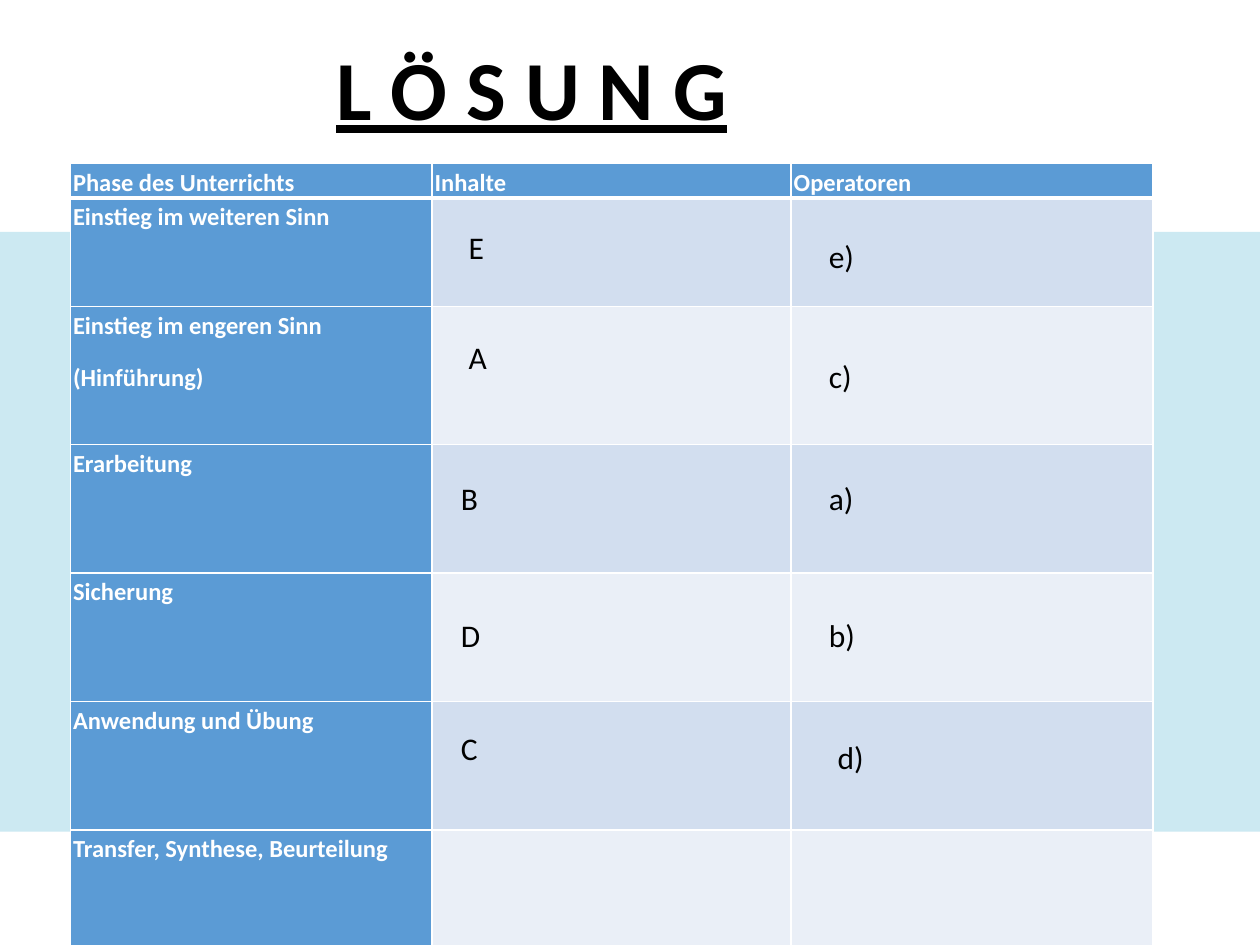
from dataclasses import dataclass

import lxml.etree
import pptx
import pptx.dml.color
import pptx.enum.shapes
import pptx.enum.text
import pptx.oxml.ns
import pptx.util

COLORS = {
    "band": "CCE9F2",
    "heading": "5B9BD5",
    "odd_row": "D2DEEF",
    "even_row": "EAEFF7",
    "white": "FFFFFF",
    "black": "000000",
}
FONT = "Calibri"
SLIDE_WIDTH, SLIDE_HEIGHT = pptx.util.Inches(10), pptx.util.Inches(7.5)
HEADINGS = ("Phase des Unterrichts", "Inhalte", "Operatoren")
COLUMN_WIDTHS = (28.7, 28.5, 28.7)  # percent of the slide's width


@dataclass(frozen=True)
class Box:
    """Position and size in percent of the slide."""
    left: float
    top: float
    width: float
    height: float

    def lengths(self) -> tuple[int, int, int, int]:
        return (
            int(SLIDE_WIDTH * self.left / 100),
            int(SLIDE_HEIGHT * self.top / 100),
            int(SLIDE_WIDTH * self.width / 100),
            int(SLIDE_HEIGHT * self.height / 100),
        )


@dataclass(frozen=True)
class Phase:
    name: str
    height: float  # percent of the slide's height


@dataclass(frozen=True)
class Answer:
    text: str
    left: float
    top: float
    width: float


PHASES = (
    Phase("Einstieg im weiteren Sinn", 11.47),
    Phase("Einstieg im engeren Sinn\n(Hinführung)", 14.6),
    Phase("Erarbeitung", 13.6),
    Phase("Sicherung", 13.6),
    Phase("Anwendung und Übung", 13.6),
    Phase("Transfer, Synthese, Beurteilung", 13.6),
)
HEADER_HEIGHT = 3.6
ANSWER_HEIGHT = 5.33
ANSWERS = (
    Answer("E", 36.2, 23.47, 22.9),
    Answer("A", 36.2, 35.07, 23.8),
    Answer("B", 35.6, 50, 24.8),
    Answer("D", 35.6, 64.53, 21.1),
    Answer("C", 35.6, 76.53, 23.4),
    Answer("e)", 64.8, 24.4, 20.2),
    Answer("c)", 64.8, 37.07, 20.2),
    Answer("a)", 64.8, 50, 21.8),
    Answer("b)", 64.8, 64.53, 21.1),
    Answer("d)", 65.5, 77.47, 22.7),
)


def rgb(name: str) -> pptx.dml.color.RGBColor:
    return pptx.dml.color.RGBColor.from_string(COLORS[name])


def write(frame, text: str, *, size: float, color: str = "black", bold: bool = False,
          underline: bool = False, line_spacing: float = 1.0, space_after: float = 0) -> None:
    frame.text = text
    for paragraph in frame.paragraphs:
        paragraph.alignment = pptx.enum.text.PP_ALIGN.LEFT
        paragraph.line_spacing = line_spacing
        paragraph.space_after = pptx.util.Pt(space_after)
        font = paragraph.font
        font.name, font.size = FONT, pptx.util.Pt(size)
        font.bold, font.underline = bold, underline
        font.color.rgb = rgb(color)


def add_title(slide, text: str, box: Box) -> None:
    title = slide.shapes.title
    title.left, title.top, title.width, title.height = box.lengths()
    frame = title.text_frame
    frame.word_wrap = True
    frame.auto_size = pptx.enum.text.MSO_AUTO_SIZE.NONE
    frame.vertical_anchor = pptx.enum.text.MSO_ANCHOR.TOP
    write(frame, text, size=48, bold=True, underline=True)


def add_band(slide, box: Box) -> None:
    band = slide.shapes.add_shape(pptx.enum.shapes.MSO_SHAPE.RECTANGLE, *box.lengths())
    band.shadow.inherit = False
    band.fill.solid()
    band.fill.fore_color.rgb = rgb("band")
    band.line.fill.background()


def set_borders(cell, **widths: float) -> None:
    """Draw white borders; the keywords L, R, T and B give widths in points."""
    properties = cell._tc.get_or_add_tcPr()
    for side in "LRTB":
        line = lxml.etree.SubElement(properties, pptx.oxml.ns.qn(f"a:ln{side}"),
                                     w=str(pptx.util.Pt(widths.get(side, 1))))
        fill = lxml.etree.SubElement(line, pptx.oxml.ns.qn("a:solidFill"))
        lxml.etree.SubElement(fill, pptx.oxml.ns.qn("a:srgbClr"), val=COLORS["white"])


def fill_cell(cell, color: str) -> None:
    cell.fill.solid()
    cell.fill.fore_color.rgb = rgb(color)


def write_heading(cell, text: str, space_after: float) -> None:
    cell.margin_left = cell.margin_right = pptx.util.Inches(0.02)
    cell.margin_top = cell.margin_bottom = 0
    write(cell.text_frame, text, size=14, color="white", bold=True,
          line_spacing=1.15, space_after=space_after)


def add_phase_table(slide, left: float, top: float) -> None:
    heights = (HEADER_HEIGHT, *(phase.height for phase in PHASES))
    box = Box(left, top, sum(COLUMN_WIDTHS), sum(heights))
    table = slide.shapes.add_table(len(heights), len(COLUMN_WIDTHS), *box.lengths()).table
    for column, width in zip(table.columns, COLUMN_WIDTHS):
        column.width = int(SLIDE_WIDTH * width / 100)
    for row, height in zip(table.rows, heights):
        row.height = int(SLIDE_HEIGHT * height / 100)

    for cell, heading in zip(table.rows[0].cells, HEADINGS):
        set_borders(cell, B=3)
        fill_cell(cell, "heading")
        write_heading(cell, heading, space_after=6)

    for number, phase in enumerate(PHASES, start=1):
        row_color = "odd_row" if number % 2 else "even_row"
        for column, cell in enumerate(table.rows[number].cells):
            set_borders(cell, T=3 if number == 1 else 1)
            fill_cell(cell, row_color if column else "heading")
        write_heading(table.cell(number, 0), phase.name, space_after=10)


def add_answer(slide, answer: Answer) -> None:
    box = Box(answer.left, answer.top, answer.width, ANSWER_HEIGHT)
    frame = slide.shapes.add_textbox(*box.lengths()).text_frame
    frame.word_wrap = True
    frame.auto_size = pptx.enum.text.MSO_AUTO_SIZE.SHAPE_TO_FIT_TEXT
    write(frame, answer.text, size=18)


def main() -> None:
    presentation = pptx.Presentation()
    presentation.slide_width, presentation.slide_height = SLIDE_WIDTH, SLIDE_HEIGHT
    slide = presentation.slides.add_slide(presentation.slide_layouts.get_by_name("Title Only"))
    add_band(slide, Box(0, 24.53, 100, 63.47))
    add_phase_table(slide, left=5.6, top=17.33)
    add_title(slide, "L Ö S U N G", Box(25.7, 3.2, 53.2, 12.13))
    for answer in ANSWERS:
        add_answer(slide, answer)
    presentation.save("out.pptx")


if __name__ == "__main__":
    main()
